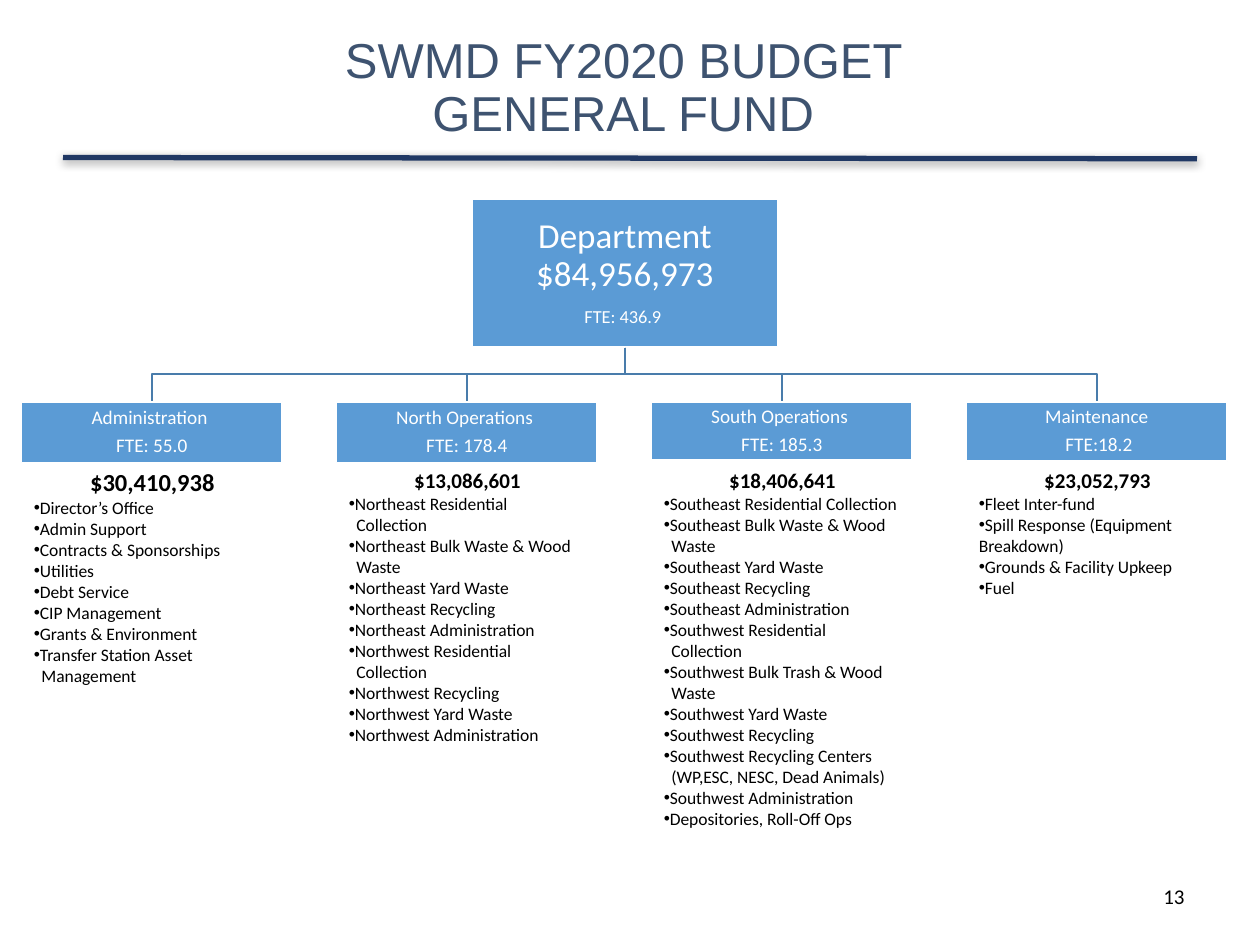
"""Build the general fund budget slide with its organisation chart."""
from copy import deepcopy

from lxml import etree
from pptx import Presentation
from pptx.dml.color import RGBColor
from pptx.enum import shapes, text
from pptx.oxml import ns, parse_xml
from pptx.util import Inches, Pt

NAVY = RGBColor(0x20, 0x38, 0x64)
SLATE = RGBColor(0x3E, 0x53, 0x70)
BLUE = RGBColor(0x5B, 0x9B, 0xD5)
LINK_BLUE = RGBColor(0x49, 0x7C, 0xAB)
WHITE = RGBColor(0xFF, 0xFF, 0xFF)
BLACK = RGBColor(0, 0, 0)
CENTER = text.PP_ALIGN.CENTER

SHADOW = f"""<a:effectLst {ns.nsdecls("a")}>
<a:outerShdw blurRad="63500" dist="20320" dir="5400000" rotWithShape="0">
<a:srgbClr val="000000"><a:alpha val="38000"/></a:srgbClr>
</a:outerShdw></a:effectLst>"""

UNITS = [
    ("Administration ", "FTE: 55.0", 0.48, "$30,410,938", 14, 2.36, [
        "Director’s Office", "Admin Support", "Contracts & Sponsorships",
        "Utilities", "Debt Service", "CIP Management",
        "Grants & Environment", "Transfer Station Asset\vManagement"]),
    ("North Operations ", "FTE: 178.4", 0.48, "$13,086,601", 12, 2.49, [
        "Northeast Residential\vCollection",
        "Northeast Bulk Waste & Wood\vWaste", "Northeast Yard Waste",
        "Northeast Recycling", "Northeast Administration",
        "Northwest Residential\vCollection", "Northwest Recycling",
        "Northwest Yard Waste", "Northwest Administration"]),
    ("South Operations ", "FTE: 185.3", 0.46, "$18,406,641", 12, 3.16, [
        "Southeast Residential Collection",
        "Southeast Bulk Waste & Wood\vWaste", "Southeast Yard Waste",
        "Southeast Recycling", "Southeast Administration",
        "Southwest Residential\vCollection",
        "Southwest Bulk Trash & Wood\vWaste", "Southwest Yard Waste",
        "Southwest Recycling",
        "Southwest Recycling Centers\v(WP,ESC, NESC, Dead Animals)",
        "Southwest Administration", "Depositories, Roll-Off Ops"]),
    ("Maintenance", " FTE:18.2", 0.47, "$23,052,793", 12, 1.65, [
        "Fleet Inter-fund", "Spill Response (Equipment Breakdown)",
        "Grounds & Facility Upkeep", "Fuel"]),
]


def write(frame, words, size, color=BLACK, font="Calibri", bold=False,
          align=text.PP_ALIGN.LEFT, spacing=1.0, after=0, bullet=False,
          indent=0):
    frame.word_wrap = True
    para = frame.paragraphs[0] if not frame.text else frame.add_paragraph()
    props = para._p.get_or_add_pPr()
    props.set("marL", str(Inches(indent)))
    props.set("indent", "0")
    if bullet:
        etree.SubElement(props, ns.qn("a:buFont"), typeface="Arial")
        etree.SubElement(props, ns.qn("a:buChar"), char="•")
    para.text = words
    para.alignment = align
    para.line_spacing = spacing
    para.space_before, para.space_after = Pt(0), Pt(after)
    for span in para.runs:
        span.font.name, span.font.size, span.font.bold = font, Pt(size), bold
        span.font.color.rgb = color
    for line_break in para._p.findall(ns.qn("a:br")):
        line_break.append(deepcopy(para.runs[0]._r.rPr))


deck = Presentation()
deck.slide_width, deck.slide_height = Inches(10), Inches(7.5)
page = deck.slides.add_slide(deck.slide_layouts[5])

rule = page.shapes.add_connector(
    shapes.MSO_CONNECTOR.STRAIGHT,
    Inches(0.5), Inches(1.25), Inches(9.5), Inches(1.26))
rule.line.color.rgb = NAVY
rule.line.width = Pt(3)
rule._element.spPr.append(parse_xml(SHADOW))

title = page.shapes.title
title.left, title.top = Inches(0.5), Inches(0.08)
title.width, title.height = Inches(9), Inches(1.25)
frame = title.text_frame
frame.auto_size = text.MSO_AUTO_SIZE.NONE
frame.vertical_anchor = text.MSO_ANCHOR.MIDDLE
frame.margin_left = frame.margin_right = 0
frame.margin_top = frame.margin_bottom = 0
write(frame, "SWMD FY2020 BUDGET \vGENERAL FUND ", 28, SLATE, "Arial",
      align=CENTER, spacing=0.9)

unit_width, unit_top = 2.07, 3.19
trunk, trunk_top, bus = 4.96, 2.76, 2.97
lefts = [0.17 + 2.5 * index for index in range(len(UNITS))]

for left in reversed(lefts):
    center = left + unit_width / 2
    builder = page.shapes.build_freeform(
        Inches(trunk), Inches(trunk_top), scale=1.0)
    builder.add_line_segments(
        [(Inches(x), Inches(y)) for x, y in
         [(trunk, bus), (center, bus), (center, unit_top)]], close=False)
    branch = builder.convert_to_shape()
    branch.shadow.inherit = False
    branch.fill.background()
    branch.line.color.rgb = LINK_BLUE
    branch.line.width = Pt(1)

boxes = [(3.75, 1.58, 2.42, 1.17,
          [("Department $84,956,973", 20, 8), ("FTE: 436.9 ", 10.5, 4)])]
for left, (name, staff, height, *_) in zip(lefts, UNITS):
    boxes.append((left, unit_top, unit_width, height,
                  [(name, 11, 4), (staff, 11, 4)]))

for left, top, width, height, lines in boxes:
    box = page.shapes.add_shape(
        shapes.MSO_SHAPE.RECTANGLE,
        Inches(left), Inches(top), Inches(width), Inches(height))
    box.shadow.inherit = False
    box.fill.solid()
    box.fill.fore_color.rgb = BLUE
    box.line.color.rgb = WHITE
    box.line.width = Pt(1)
    frame = box.text_frame
    frame.vertical_anchor = text.MSO_ANCHOR.MIDDLE
    frame.margin_left = frame.margin_right = Inches(0.01)
    frame.margin_top = frame.margin_bottom = Inches(0.01)
    for words, size, after in lines:
        write(frame, words, size, WHITE, align=CENTER, spacing=0.9,
              after=after)

for left, (*_, amount, size, height, duties) in zip(lefts, UNITS):
    box = page.shapes.add_textbox(
        Inches(left), Inches(3.66), Inches(2.08), Inches(height))
    write(box.text_frame, amount, size, bold=True, align=CENTER)
    for duty in duties:
        first, *rest = duty.split("\v")
        write(box.text_frame, first, 10, bullet=True)
        for words in rest:
            write(box.text_frame, words, 10, indent=0.06)

number = page.shapes.add_textbox(
    Inches(7.17), Inches(6.96), Inches(2.33), Inches(0.4))
write(number.text_frame, "13", 12, align=text.PP_ALIGN.RIGHT)

deck.save("out.pptx")
